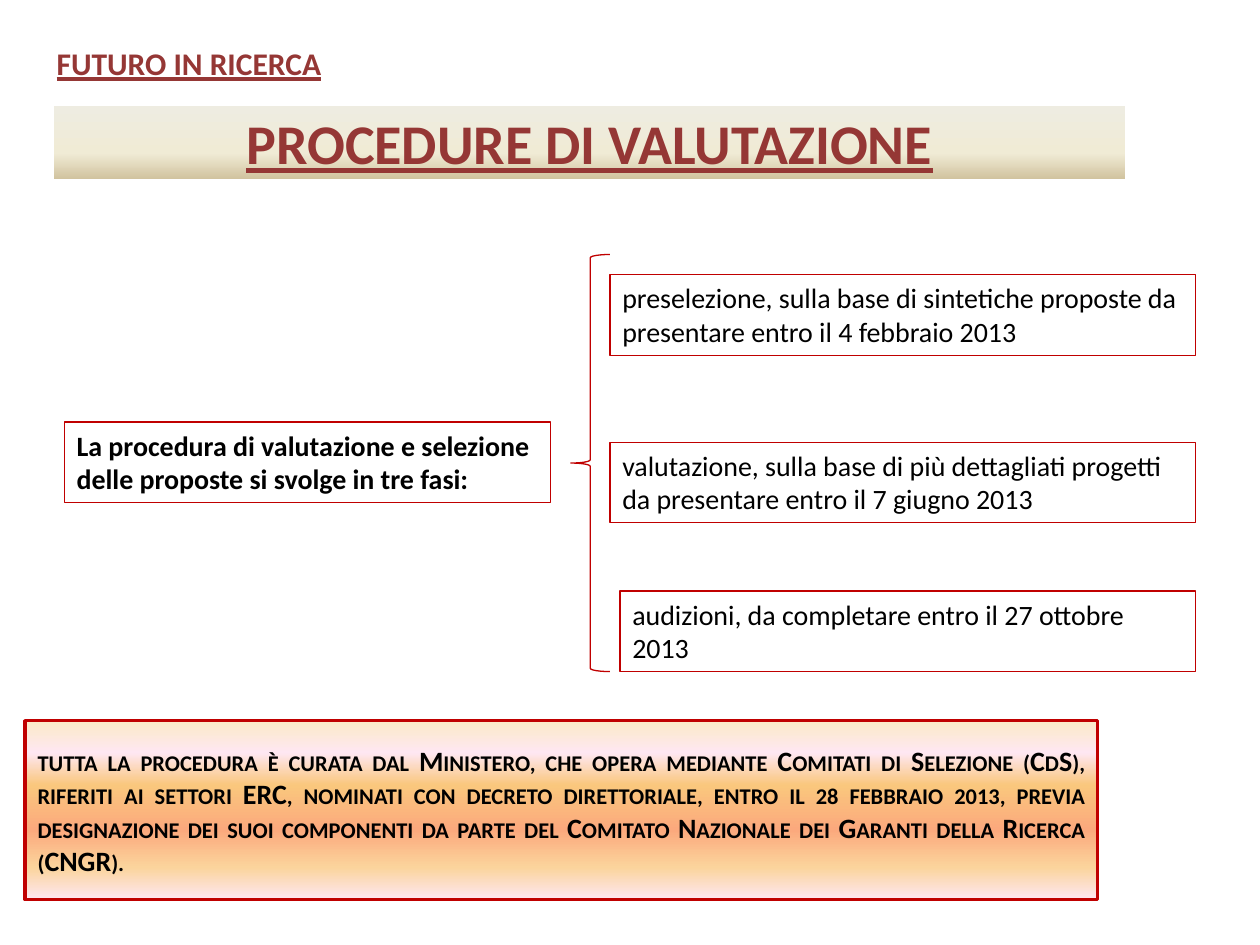
from dataclasses import dataclass

from lxml.etree import SubElement
from pptx import Presentation
from pptx.dml.color import RGBColor
from pptx.enum.shapes import MSO_SHAPE as Shape
from pptx.enum.text import MSO_ANCHOR as Anchor, MSO_AUTO_SIZE as AutoSize, PP_ALIGN as Align
from pptx.oxml.ns import qn
from pptx.util import Inches, Pt


@dataclass(frozen=True)
class Theme:
    font: str = "Calibri"
    heading: str = "953735"
    text: str = "000000"
    line: str = "C00000"
    title_size: int = 32
    label_size: int = 18
    body_size: int = 16
    thin: float = 0.75
    thick: float = 2
    sand: tuple = ((0, "EEECE1"), (65, "F0EBD5"), (100, "D1C39F"))
    sunset: tuple = ((0, "FBEAC7"), (18, "FEE7F2"), (36, "FAC77D"),
                     (61, "FBA97D"), (82, "FBD49C"), (100, "FEE7F2"))


def write(sp, text, *, font, size, color, bold=False, underline=False, small_caps=False,
          align=Align.LEFT, anchor=Anchor.TOP, auto_size=AutoSize.NONE):
    """Put one formatted paragraph into a shape."""
    tf = sp.text_frame
    tf.word_wrap = True
    tf.auto_size = auto_size
    tf.vertical_anchor = anchor
    p = tf.paragraphs[0]
    p.alignment = align
    r = p.add_run()
    r.text = text
    r.font.name, r.font.size = font, Pt(size)
    r.font.bold, r.font.underline = bold, underline
    r.font.color.rgb = RGBColor.from_string(color)
    if small_caps:
        r.font._element.set("cap", "small")


def fill_gradient(sp, stops):
    """Fill a shape from top to bottom with (percent, colour) stops."""
    sp.fill.gradient()
    sp.fill.gradient_angle = 270
    stop_list = sp._element.spPr.find(qn("a:gradFill")).find(qn("a:gsLst"))
    for old in list(stop_list):
        stop_list.remove(old)
    for percent, color in stops:
        stop = SubElement(stop_list, qn("a:gs"), pos=str(percent * 1000))
        SubElement(stop, qn("a:srgbClr"), val=color)


class SlideBuilder:
    def __init__(self, slide, theme):
        self.s = slide
        self.theme = theme

    def heading_text(self, sp, text, size):
        write(sp, text, font=self.theme.font, size=size, color=self.theme.heading,
              bold=True, underline=True, align=Align.CENTER, anchor=Anchor.MIDDLE)

    def title(self, text, left, top, width, height):
        sp = self.s.shapes.title
        sp.left, sp.top, sp.width, sp.height = map(Inches, (left, top, width, height))
        fill_gradient(sp, self.theme.sand)
        self.heading_text(sp, text, self.theme.title_size)

    def label(self, text, left, top, width, height):
        sp = self.s.shapes.add_textbox(*map(Inches, (left, top, width, height)))
        self.heading_text(sp, text, self.theme.label_size)

    def outline(self, kind, left, top, width, height, weight):
        sp = self.s.shapes.add_shape(kind, *map(Inches, (left, top, width, height)))
        sp.shadow.inherit = False
        sp.fill.background()
        sp.line.color.rgb = RGBColor.from_string(self.theme.line)
        sp.line.width = Pt(weight)
        return sp

    def box(self, text, left, top, width, height, weight=None, stops=None, **fmt):
        sp = self.outline(Shape.RECTANGLE, left, top, width, height, weight or self.theme.thin)
        if stops:
            fill_gradient(sp, stops)
        write(sp, text, font=self.theme.font, size=self.theme.body_size,
              color=self.theme.text, **fmt)

    def brace(self, left, top, width, height):
        self.outline(Shape.LEFT_BRACE, left, top, width, height, self.theme.thin)


def main():
    prs = Presentation()
    prs.slide_width, prs.slide_height = Inches(10), Inches(7.5)
    theme = Theme()
    b = SlideBuilder(prs.slides.add_slide(prs.slide_layouts[5]), theme)

    # Headings
    b.title("PROCEDURE DI VALUTAZIONE", 0.43, 0.84, 8.5, 0.58)
    b.label("FUTURO IN RICERCA", 0.2, 0.21, 2.6, 0.58)

    # Procedure and its three phases, flush on the right
    box_height, right = 0.64, 9.49
    b.box("La procedura di valutazione e selezione delle proposte si svolge in tre fasi:",
          0.51, 3.35, 3.86, box_height, bold=True, auto_size=AutoSize.SHAPE_TO_FIT_TEXT)
    phases = (
        (4.84, 2.18, "preselezione, sulla base di sintetiche proposte da presentare "
                     "entro il 4 febbraio 2013"),
        (4.84, 3.51, "valutazione, sulla base di più dettagliati progetti da presentare "
                     "entro il 7 giugno 2013"),
        (4.92, 4.69, "audizioni, da completare entro il 27 ottobre 2013"),
    )
    for left, top, text in phases:
        b.box(text, left, top, right - left, box_height, auto_size=AutoSize.SHAPE_TO_FIT_TEXT)
    b.brace(4.53, 2.02, 0.31, 3.31)

    # Closing note
    b.box("tutta la procedura è curata dal Ministero, che opera mediante Comitati di Selezione "
          "(CdS), riferiti ai settori ERC, nominati con decreto direttoriale, entro il 28 "
          "febbraio 2013, previa designazione dei suoi componenti da parte del Comitato "
          "Nazionale dei Garanti della Ricerca (CNGR).",
          0.2, 5.72, 8.51, 1.42, weight=theme.thick, stops=theme.sunset,
          bold=True, small_caps=True, align=Align.JUSTIFY, anchor=Anchor.MIDDLE)

    prs.save("out.pptx")


if __name__ == "__main__":
    main()
